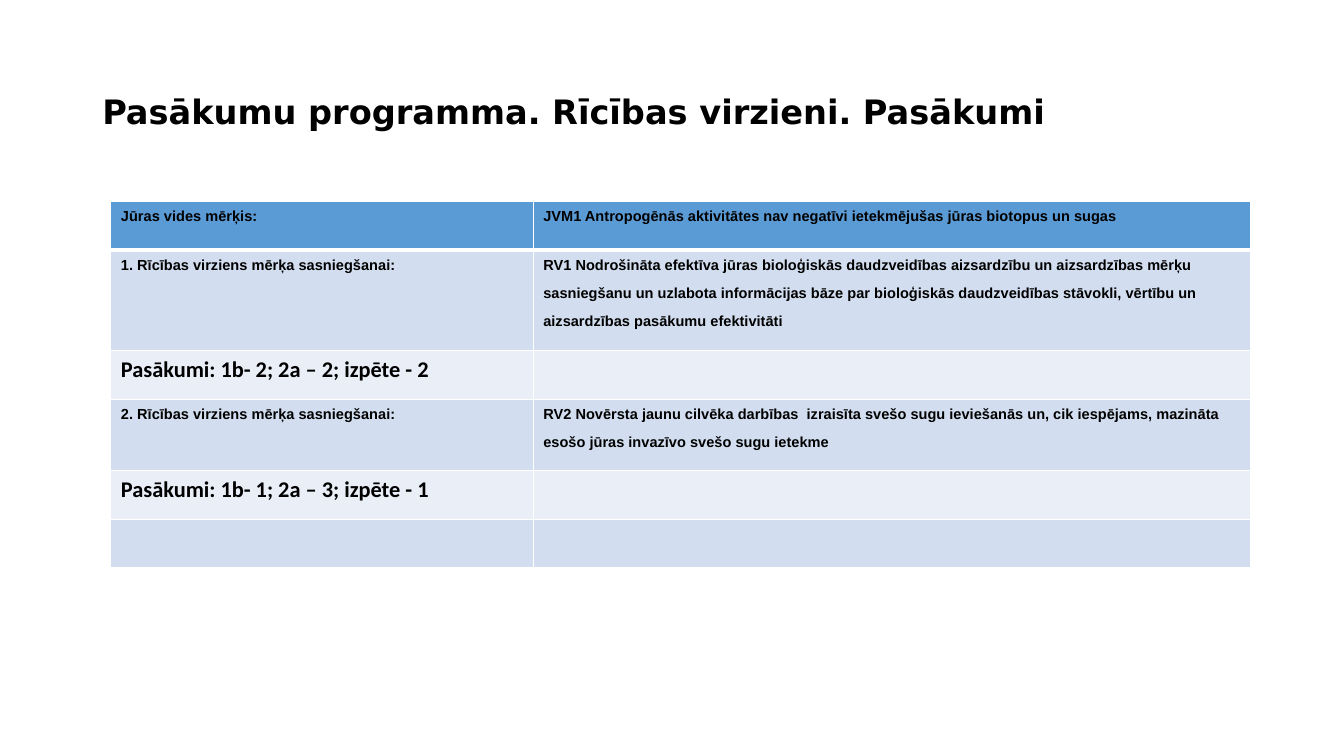
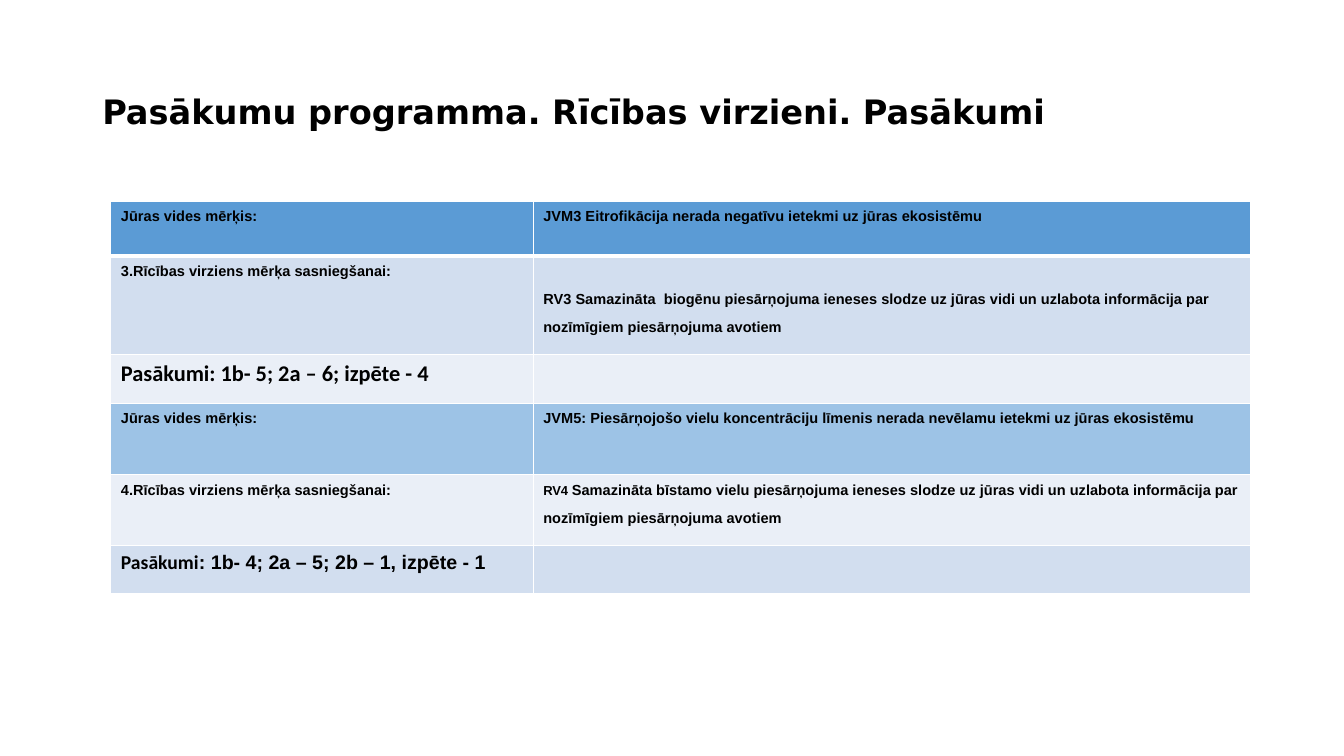
import pptx
import pptx.dml.color
import pptx.enum.text
import pptx.oxml
import pptx.oxml.ns
import pptx.util

# The slide is laid out on a square grid, ten cells to the inch.
GRID_COLUMNS, GRID_ROWS = 133.33, 75

TITLE = "Pasākumu programma. Rīcības virzieni. Pasākumi"
GOAL_LABEL = "Jūras vides mērķis:"
ACTION_LABEL = "Rīcības virziens mērķa sasniegšanai:"

BLACK, WHITE = "000000", "FFFFFF"
HEADER, SUBHEADER = "5B9BD5", "9DC3E6"
DARK_BAND, LIGHT_BAND = "D2DEEF", "EAEFF7"

# Text styles: font, size in points, raised baseline
HEADING = ("DejaVu Sans", 24, False)
RAISED = ("Arial", 18, True)
RAISED_SMALL = ("Arial", 16, True)
MEASURES = ("Calibri", 16, False)
MEASURES_SMALL = ("Calibri", 14, False)
MEASURES_ARIAL = ("Arial", 14, False)


def grid(count):
    return pptx.util.Inches(count / 10)


def color(hex_string):
    return pptx.dml.color.RGBColor.from_string(hex_string)


class Deck:
    TABLE_LEFT, TABLE_TOP = 11, 20
    TABLE_COLUMNS = (41.9, 71.2)
    LINE = 2.8  # height of one raised text line

    def __init__(self):
        self.presentation = pptx.Presentation()
        self.presentation.slide_width = grid(GRID_COLUMNS)
        self.presentation.slide_height = grid(GRID_ROWS)
        self.slide = None

    def add_slide(self):
        self.slide = self.presentation.slides.add_slide(self.presentation.slide_layouts[6])
        self.slide.background.fill.solid()
        self.slide.background.fill.fore_color.rgb = color(WHITE)

    def add_text(self, paragraph, text, style):
        font_name, size, raised = style
        run = paragraph.add_run()
        run.text = text
        run.font.name = font_name
        run.font.size = pptx.util.Pt(size)
        run.font.bold = True
        run.font.color.rgb = color(BLACK)
        if raised:
            run.font._element.set("baseline", "30000")

    def add_title(self, text):
        width = 115
        shape = self.slide.shapes.add_textbox(
            grid((GRID_COLUMNS - width) / 2), grid(4), grid(width), grid(14.5))
        frame = shape.text_frame
        frame.word_wrap = True
        frame.vertical_anchor = pptx.enum.text.MSO_ANCHOR.MIDDLE
        paragraph = frame.paragraphs[0]
        paragraph.line_spacing = 0.9
        self.add_text(paragraph, text, HEADING)

    def set_borders(self, cell, top, bottom):
        """Draw white cell borders; top and bottom are widths in points."""
        properties = cell._tc.get_or_add_tcPr()
        widths = {"lnL": 1, "lnR": 1, "lnT": top, "lnB": bottom}
        for index, (side, width) in enumerate(widths.items()):
            properties.insert(index, pptx.oxml.parse_xml(
                f'<a:{side} {pptx.oxml.ns.nsdecls("a")} w="{pptx.util.Pt(width)}">'
                f'<a:solidFill><a:srgbClr val="{WHITE}"/></a:solidFill></a:{side}>'))

    def add_table(self, rows):
        """Each row is its height, fill, left runs, right runs and lines skipped on the right."""
        shape = self.slide.shapes.add_table(
            len(rows), len(self.TABLE_COLUMNS), grid(self.TABLE_LEFT), grid(self.TABLE_TOP),
            grid(sum(self.TABLE_COLUMNS)), grid(sum(row[0] for row in rows)))
        table = shape.table
        table.horz_banding = False
        for column, width in zip(table.columns, self.TABLE_COLUMNS):
            column.width = grid(width)
        for row_index, (height, fill, left, right, skipped) in enumerate(rows):
            table.rows[row_index].height = grid(height)
            for column_index, runs in enumerate((left, right)):
                cell = table.cell(row_index, column_index)
                cell.fill.solid()
                cell.fill.fore_color.rgb = color(fill)
                self.set_borders(cell, top=3 if row_index == 1 else 1,
                                 bottom=3 if row_index == 0 else 1)
                for text, style in runs:
                    self.add_text(cell.text_frame.paragraphs[0], text, style)
            if skipped:
                cell.margin_top = grid(0.5 + skipped * self.LINE)


def labelled_row(height, fill, label, text, skipped=0):
    return height, fill, [(label, RAISED)], [(text, RAISED)], skipped


def measures_row(fill, *runs):
    return 4.8, fill, runs, (), 0


TABLES = [
    [
        labelled_row(4.8, HEADER, GOAL_LABEL,
                     "JVM1 Antropogēnās aktivitātes nav negatīvi ietekmējušas jūras biotopus un sugas"),
        labelled_row(8.6, DARK_BAND, f"1. {ACTION_LABEL}",
                     "RV1 Nodrošināta efektīva jūras bioloģiskās daudzveidības aizsardzību un "
                     "aizsardzības mērķu sasniegšanu un uzlabota informācijas bāze par bioloģiskās "
                     "daudzveidības stāvokli, vērtību un aizsardzības pasākumu efektivitāti"),
        measures_row(LIGHT_BAND, ("Pasākumi: 1b- 2; 2a – 2; izpēte - 2", MEASURES)),
        labelled_row(7.1, DARK_BAND, f"2. {ACTION_LABEL}",
                     "RV2 Novērsta jaunu cilvēka darbības  izraisīta svešo sugu ieviešanās un, cik "
                     "iespējams, mazināta esošo jūras invazīvo svešo sugu ietekme"),
        measures_row(LIGHT_BAND, ("Pasākumi: 1b- 1; 2a – 3; izpēte - 1", MEASURES)),
        measures_row(DARK_BAND),
    ],
    [
        labelled_row(5.4, HEADER, GOAL_LABEL,
                     "JVM3 Eitrofikācija nerada negatīvu ietekmi uz jūras ekosistēmu"),
        labelled_row(8.6, DARK_BAND, f"3.{ACTION_LABEL}",
                     "RV3 Samazināta  biogēnu piesārņojuma ieneses slodze uz jūras vidi un uzlabota "
                     "informācija par nozīmīgiem piesārņojuma avotiem", skipped=1),
        measures_row(LIGHT_BAND, ("Pasākumi: 1b- 5; 2a – 6; izpēte - 4", MEASURES)),
        labelled_row(7.1, SUBHEADER, GOAL_LABEL,
                     "JVM5: Piesārņojošo vielu koncentrāciju līmenis nerada nevēlamu ietekmi uz "
                     "jūras ekosistēmu"),
        (4.8, LIGHT_BAND, [(f"4.{ACTION_LABEL}", RAISED)],
         [("RV4 ", RAISED_SMALL),
          ("Samazināta bīstamo vielu piesārņojuma ieneses slodze uz jūras vidi un uzlabota "
           "informācija par nozīmīgiem piesārņojuma avotiem", RAISED)], 0),
        measures_row(DARK_BAND, ("Pasākumi", MEASURES_SMALL),
                     (": 1b- 4; 2a – 5; 2b – 1, izpēte - 1", MEASURES_ARIAL)),
    ],
]


def main():
    deck = Deck()
    for rows in TABLES:
        deck.add_slide()
        deck.add_title(TITLE)
        deck.add_table(rows)
    deck.presentation.save("out.pptx")


if __name__ == "__main__":
    main()
